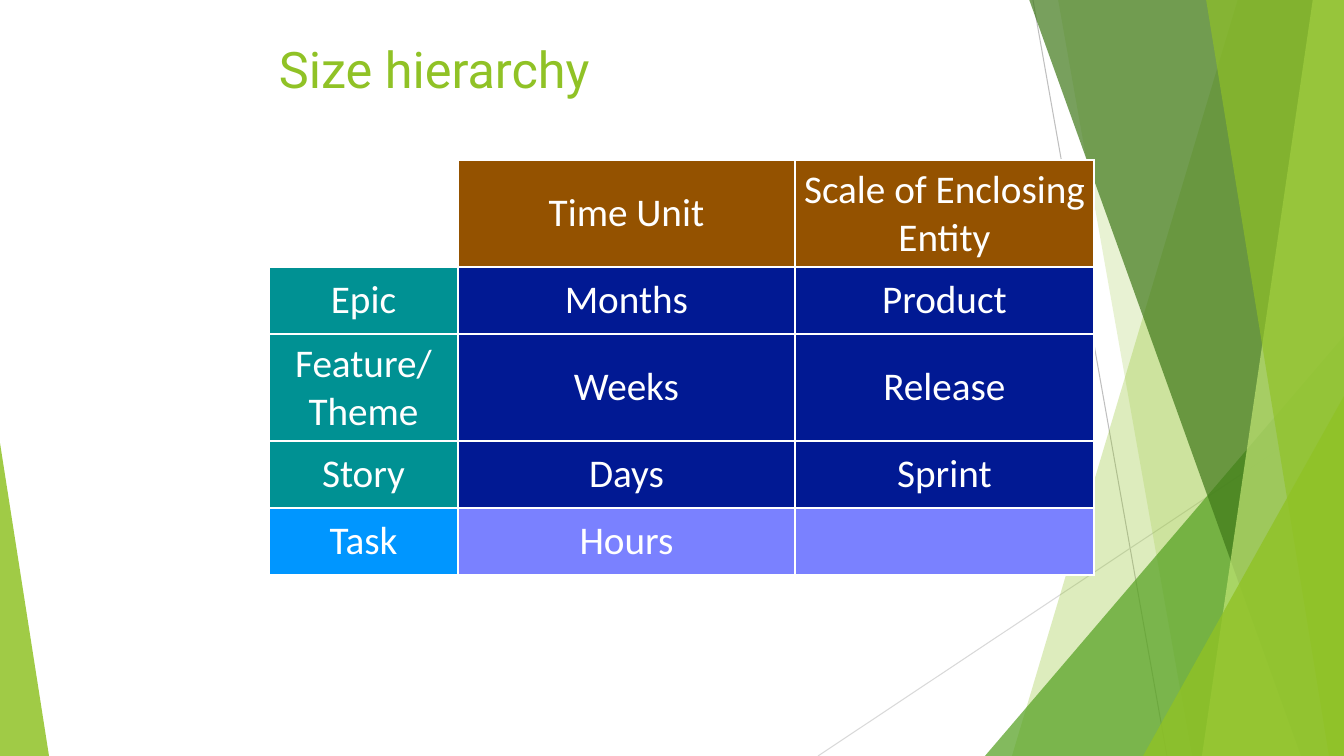
"""Build the size hierarchy slide: a coloured table among slanted green bands."""
from dataclasses import dataclass

from lxml import etree
from pptx import Presentation
from pptx import util as u
from pptx.dml.color import RGBColor
from pptx.enum import shapes, text
from pptx.oxml import ns

SCALE = 914400 / 100.8
WIDE, HIGH = 1344, 756


@dataclass(frozen=True)
class Theme:
    white: str = "FFFFFF"
    lime: str = "90C226"
    pale: str = "C0E474"
    green: str = "54A021"
    dark: str = "3F7819"
    grey: str = "BFBFBF"
    light: str = "D9D9D9"
    brown: str = "945200"
    teal: str = "009193"
    navy: str = "011993"
    sky: str = "0096FF"
    lilac: str = "7A81FF"
    title_font: str = "Roboto"
    body_font: str = "Calibri"
    title_size: int = 36
    body_size: int = 28
    hair: float = 0.75
    rule: int = 2


@dataclass(frozen=True)
class Line:
    start: tuple[int, int]
    end: tuple[int, int]
    color: str


@dataclass(frozen=True)
class Band:
    top: int
    base: int
    color: str
    alpha: int


@dataclass(frozen=True)
class Wedge:
    left: int
    top: int
    width: int
    apex: int
    color: str
    alpha: int


@dataclass(frozen=True)
class Row:
    height: int
    words: tuple[str, str, str]
    head: str | None
    fill: str


T = Theme()

LINES = [
    Line((1033, 0), (1167, HIGH), T.grey),
    Line((WIDE, 406), (818, HIGH), T.light),
]
PANES = [
    Band(1238, 1012, T.lime, 30),
    Band(1058, 1192, T.lime, 20),
    Wedge(985, 336, 359, 1, T.green, 72),
    Band(1029, 1301, T.dark, 70),
    Band(1313, 1202, T.pale, 70),
    Band(1206, 1329, T.lime, 65),
    Wedge(1143, 396, 201, 1, T.lime, 80),
    Wedge(0, 443, 49, 0, T.lime, 85),
]
COLS = [189, 337, 299]
ROWS = [
    Row(107, ("", "Time Unit", "Scale of Enclosing Entity"), None, T.brown),
    Row(67, ("Epic", "Months", "Product"), T.teal, T.navy),
    Row(107, ("Feature/ Theme", "Weeks", "Release"), T.teal, T.navy),
    Row(67, ("Story", "Days", "Sprint"), T.teal, T.navy),
    Row(67, ("Task", "Hours", ""), T.sky, T.lilac),
]


def px(size: int) -> u.Emu:
    """Turn pixels into EMU."""
    return u.Emu(round(size * SCALE))


def sub(node, tag: str, **attrs: str):
    """Add a child element by its prefixed name."""
    return etree.SubElement(node, ns.qn(tag), attrs)


def write(frame, words: str, *, font: str, size: int, color: str,
          align=text.PP_ALIGN.LEFT) -> None:
    """Put formatted words in a text frame."""
    frame.word_wrap = True
    para = frame.paragraphs[0]
    para.alignment = align
    run = para.add_run()
    run.text = words
    run.font.name = font
    run.font.size = u.Pt(size)
    run.font.color.rgb = RGBColor.from_string(color)


def draw_line(slide, line: Line) -> None:
    """Draw a thin line with no shadow."""
    shape = slide.shapes.add_connector(
        shapes.MSO_CONNECTOR.STRAIGHT, *map(px, line.start + line.end))
    shape.line.color.rgb = RGBColor.from_string(line.color)
    shape.line.width = u.Pt(T.hair)
    sub(shape.element.spPr, "a:effectLst")


def draw_pane(slide, pane: Band | Wedge) -> None:
    """Draw one translucent band or wedge."""
    if isinstance(pane, Band):
        path = slide.shapes.build_freeform(pane.top, -1, scale=SCALE)
        path.add_line_segments([(WIDE, -1), (WIDE, HIGH), (pane.base, HIGH)])
        shape = path.convert_to_shape()
    else:
        shape = slide.shapes.add_shape(
            shapes.MSO_SHAPE.ISOSCELES_TRIANGLE, px(pane.left), px(pane.top),
            px(pane.width), px(HIGH - pane.top))
        shape.adjustments[0] = pane.apex
    shape.shadow.inherit = False
    shape.line.fill.background()
    shape.fill.solid()
    shape.fill.fore_color.rgb = RGBColor.from_string(pane.color)
    tint = shape.element.spPr.find(".//" + ns.qn("a:srgbClr"))
    sub(tint, "a:alpha", val=str(pane.alpha * 1000))


def draw_cell(cell, words: str, fill: str | None) -> None:
    """Frame, fill and label one table cell."""
    props = cell._tc.get_or_add_tcPr()
    for side in "LRTB":
        edge = sub(props, f"a:ln{side}", w=str(u.Pt(T.rule)))
        sub(sub(edge, "a:solidFill"), "a:srgbClr", val=T.white)
    if fill:
        cell.fill.solid()
        cell.fill.fore_color.rgb = RGBColor.from_string(fill)
    else:
        cell.fill.background()
    cell.margin_left = cell.margin_right = px(6)
    cell.margin_top = cell.margin_bottom = px(6)
    cell.vertical_anchor = text.MSO_ANCHOR.MIDDLE
    if words:
        write(cell.text_frame, words, font=T.body_font, size=T.body_size,
              color=T.white, align=text.PP_ALIGN.CENTER)


def draw_table(slide) -> None:
    """Draw the table of sizes."""
    high = sum(row.height for row in ROWS)
    table = slide.shapes.add_table(
        len(ROWS), len(COLS), px(269), px(160), px(sum(COLS)), px(high)).table
    table.first_row = table.horz_banding = False
    for col, width in zip(table.columns, COLS):
        col.width = px(width)
    for line, row in zip(table.rows, ROWS):
        line.height = px(row.height)
        fills = (row.head, row.fill, row.fill)
        for cell, words, fill in zip(line.cells, row.words, fills):
            draw_cell(cell, words, fill)


def main() -> None:
    """Build and save the slide."""
    deck = Presentation()
    deck.slide_width, deck.slide_height = px(WIDE), px(HIGH)
    slide = deck.slides.add_slide(deck.slide_layouts[6])
    for line in LINES:
        draw_line(slide, line)
    for pane in PANES:
        draw_pane(slide, pane)
    title = slide.shapes.add_textbox(px(269), px(33), px(857), px(87))
    write(title.text_frame, "Size hierarchy", font=T.title_font,
          size=T.title_size, color=T.lime)
    draw_table(slide)
    deck.save("out.pptx")


if __name__ == "__main__":
    main()
